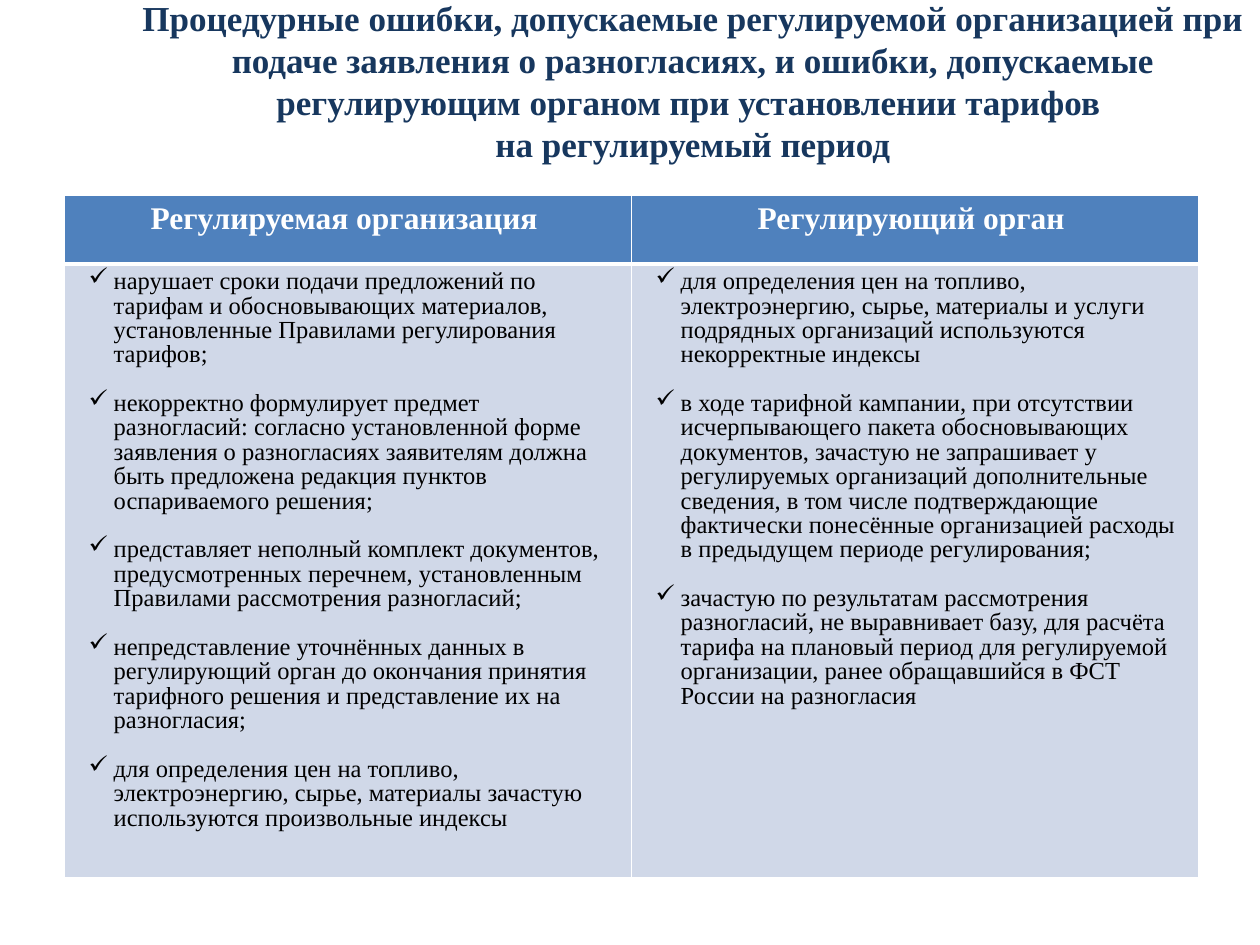
from lxml import etree
from pptx import Presentation
from pptx.dml.color import RGBColor
from pptx.enum import text as t
from pptx.oxml import ns
from pptx.util import Pt

NAVY = RGBColor(0x17, 0x37, 0x5E)
BLUE = RGBColor(0x4F, 0x81, 0xBD)
PALE = RGBColor(0xD0, 0xD8, 0xE8)
WHITE = RGBColor(0xFF, 0xFF, 0xFF)
BLACK = RGBColor(0, 0, 0)
FONT = "Times New Roman"

TITLE = (
    "Процедурные ошибки, допускаемые регулируемой организацией при подаче "
    "заявления о разногласиях, и ошибки, допускаемые регулирующим органом "
    "при установлении тарифов \vна регулируемый период"
)
COLUMNS = {
    "Регулируемая организация ": [
        "нарушает сроки подачи предложений по тарифам и обосновывающих материалов, "
        "установленные Правилами регулирования тарифов;",
        "некорректно формулирует предмет разногласий: согласно установленной форме "
        "заявления о разногласиях заявителям должна быть предложена редакция пунктов "
        "оспариваемого решения;",
        "представляет неполный комплект документов, предусмотренных перечнем, "
        "установленным Правилами рассмотрения разногласий;",
        "непредставление уточнённых данных в регулирующий орган до окончания принятия "
        "тарифного решения и представление их на разногласия;",
        "для определения цен на топливо, электроэнергию, сырье, материалы зачастую "
        "используются произвольные индексы",
    ],
    "Регулирующий орган ": [
        "для определения цен на топливо, электроэнергию, сырье, материалы и услуги "
        "подрядных организаций используются некорректные индексы",
        "в ходе тарифной кампании, при отсутствии исчерпывающего пакета обосновывающих "
        "документов, зачастую не запрашивает у регулируемых организаций дополнительные "
        "сведения, в том числе подтверждающие фактически понесённые организацией расходы "
        "в предыдущем периоде регулирования;",
        "зачастую по результатам рассмотрения разногласий, не выравнивает базу, для "
        "расчёта тарифа на плановый период для регулируемой организации, ранее "
        "обращавшийся в ФСТ России на разногласия",
    ],
}


def write(paragraph, content, size, color, bold=False, align=t.PP_ALIGN.LEFT):
    """Fill a paragraph; a vertical tab in the content becomes a line break."""
    paragraph.alignment = align
    for index, line in enumerate(content.split("\v")):
        if index:
            paragraph.add_line_break()
        run = paragraph.add_run()
        run.text = line
        run.font.name = FONT
        run.font.size = Pt(size)
        run.font.bold = bold
        run.font.color.rgb = color


def add_bullet(paragraph):
    properties = paragraph._p.get_or_add_pPr()
    properties.set("marL", str(Pt(20.9)))
    properties.set("indent", str(Pt(-14.4)))
    etree.SubElement(properties, ns.qn("a:buChar"), char="✓")


def style_cell(cell, fill, bottom_width=1, top_width=1):
    properties = cell._tc.get_or_add_tcPr()
    widths = {"lnL": 1, "lnR": 1, "lnT": top_width, "lnB": bottom_width}
    for side, width in widths.items():
        line = etree.SubElement(properties, ns.qn(f"a:{side}"), w=str(Pt(width)))
        solid = etree.SubElement(line, ns.qn("a:solidFill"))
        etree.SubElement(solid, ns.qn("a:srgbClr"), val=str(WHITE))
    cell.fill.solid()
    cell.fill.fore_color.rgb = fill


def add_title(slide, left, top, width, height):
    frame = slide.shapes.add_textbox(Pt(left), Pt(top), Pt(width), Pt(height)).text_frame
    frame.word_wrap = True
    frame.vertical_anchor = t.MSO_ANCHOR.MIDDLE
    frame.margin_bottom = Pt(26.6)  # raises the text above the middle of its box
    write(frame.paragraphs[0], TITLE, 20, NAVY, bold=True, align=t.PP_ALIGN.CENTER)


def add_errors_table(slide, left, top, width, row_heights):
    table = slide.shapes.add_table(
        len(row_heights), len(COLUMNS), Pt(left), Pt(top), Pt(width), Pt(sum(row_heights))
    ).table
    for row, height in zip(table.rows, row_heights):
        row.height = Pt(height)
    for index, (heading, errors) in enumerate(COLUMNS.items()):
        table.columns[index].width = Pt(width / len(COLUMNS))
        header, body = table.cell(0, index), table.cell(1, index)
        style_cell(header, BLUE, bottom_width=3)
        write(header.text_frame.paragraphs[0], heading, 18, WHITE,
              bold=True, align=t.PP_ALIGN.CENTER)
        style_cell(body, PALE, top_width=3)
        frame = body.text_frame
        for number, error in enumerate(errors):
            paragraph = frame.add_paragraph() if number else frame.paragraphs[0]
            paragraph.line_spacing = 0.9
            if number:
                paragraph.space_before = Pt(14)
            add_bullet(paragraph)
            write(paragraph, error, 14, BLACK)


def main():
    presentation = Presentation()
    presentation.slide_width, presentation.slide_height = Pt(720), Pt(540)
    slide = presentation.slides.add_slide(presentation.slide_layouts[6])
    add_title(slide, 72, 20.9, 648, 73.4)
    add_errors_table(slide, 36.9, 111.4, 648, (39.4, 327))
    presentation.save("out.pptx")


if __name__ == "__main__":
    main()
